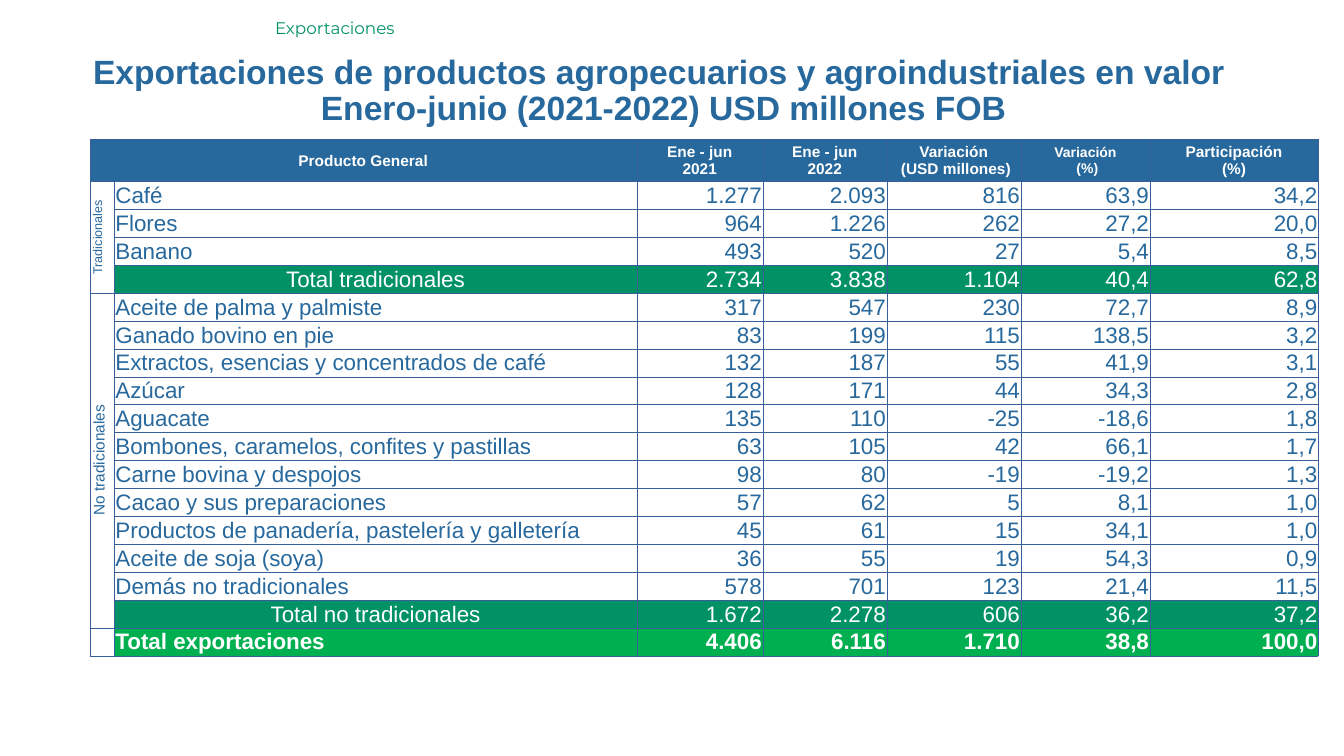
from dataclasses import dataclass
from lxml.etree import SubElement
from pptx import Presentation
from pptx.dml.color import RGBColor
from pptx.enum.text import MSO_ANCHOR, PP_ALIGN
from pptx.oxml.ns import qn
from pptx.util import Pt

PX = 4572
COLORS = {
    "blue": "27689D",
    "line": "395F9B",
    "label": "009267",
    "green": "009165",
    "bright": "00B050",
    "white": "FFFFFF",
}
LEFT, CENTER, RIGHT = PP_ALIGN.LEFT, PP_ALIGN.CENTER, PP_ALIGN.RIGHT
WIDTHS = [49, 1036, 250, 246, 266, 256, 334]
HEAD_H, ROW_H = 84, 55


@dataclass
class Row:
    name: str
    values: str
    kind: str = "item"


@dataclass
class Style:
    fill: str | None
    color: str
    align: PP_ALIGN
    bold: bool = False


@dataclass
class Group:
    name: str
    first: int
    last: int
    size: int


STYLES = {
    "item": Style(None, "blue", LEFT),
    "part": Style("green", "white", CENTER),
    "total": Style("bright", "white", LEFT, True),
}
HEADS = [
    ("Ene - jun\n2021", 11),
    ("Ene - jun\n2022", 11),
    ("Variación\n (USD millones)", 11),
    ("Variación\n (%)", 10),
    ("Participación\n(%)", 11),
]
ROWS = [
    Row("Café", "1.277 2.093 816 63,9 34,2"),
    Row("Flores", "964 1.226 262 27,2 20,0"),
    Row("Banano", "493 520 27 5,4 8,5"),
    Row("Total tradicionales", "2.734 3.838 1.104 40,4 62,8", "part"),
    Row("Aceite de palma y palmiste", "317 547 230 72,7 8,9"),
    Row("Ganado bovino en pie", "83 199 115 138,5 3,2"),
    Row("Extractos, esencias y concentrados de café", "132 187 55 41,9 3,1"),
    Row("Azúcar", "128 171 44 34,3 2,8"),
    Row("Aguacate", "135 110 -25 -18,6 1,8"),
    Row("Bombones, caramelos, confites y pastillas", "63 105 42 66,1 1,7"),
    Row("Carne bovina y despojos", "98 80 -19 -19,2 1,3"),
    Row("Cacao y sus preparaciones", "57 62 5 8,1 1,0"),
    Row("Productos de panadería, pastelería y galletería", "45 61 15 34,1 1,0"),
    Row("Aceite de soja (soya)", "36 55 19 54,3 0,9"),
    Row("Demás no tradicionales", "578 701 123 21,4 11,5"),
    Row("Total no tradicionales", "1.672 2.278 606 36,2 37,2", "part"),
    Row("Total exportaciones", "4.406 6.116 1.710 38,8 100,0", "total"),
]
GROUPS = [Group("Tradicionales", 1, 4, 9), Group("No tradicionales", 5, 16, 11)]


def write(frame, text: str, *, size: int, color: str = "blue", font: str = "Arial",
          bold: bool = False, align: PP_ALIGN = LEFT, spacing: float = 1.0) -> None:
    for index, line in enumerate(text.split("\n")):
        para = frame.add_paragraph() if index else frame.paragraphs[0]
        para.text = line
        para.alignment = align
        para.line_spacing = spacing
        for run in para.runs:
            run.font.name = font
            run.font.size = Pt(size)
            run.font.bold = bold
            run.font.color.rgb = RGBColor.from_string(COLORS[color])


def add_box(slide, left: int, top: int, width: int, height: int, text: str, **look) -> None:
    box = slide.shapes.add_textbox(left * PX, top * PX, width * PX, height * PX)
    box.text_frame.word_wrap = True
    box.text_frame.vertical_anchor = MSO_ANCHOR.MIDDLE
    write(box.text_frame, text, **look)


def prepare(cell) -> None:
    cell.margin_left = cell.margin_right = cell.margin_top = 2 * PX
    cell.margin_bottom = 0
    cell.vertical_anchor = MSO_ANCHOR.MIDDLE
    props = cell._tc.get_or_add_tcPr()
    for side in ("lnL", "lnR", "lnT", "lnB"):
        line = SubElement(props, qn(f"a:{side}"), w=str(Pt(0.25)))
        solid = SubElement(line, qn("a:solidFill"))
        SubElement(solid, qn("a:srgbClr"), val=COLORS["line"])
    cell.fill.background()
    SubElement(cell.text_frame.paragraphs[0]._p, qn("a:endParaRPr"), sz="900")


def paint(cell, color: str | None) -> None:
    if color:
        cell.fill.solid()
        cell.fill.fore_color.rgb = RGBColor.from_string(COLORS[color])


def add_grid(slide) -> None:
    count = len(ROWS) + 1
    height = HEAD_H + ROW_H * len(ROWS)
    table = slide.shapes.add_table(count, len(WIDTHS), 178 * PX, 276 * PX,
                                   sum(WIDTHS) * PX, height * PX).table
    table.first_row = table.horz_banding = False
    for column, width in zip(table.columns, WIDTHS):
        column.width = width * PX
    for index, row in enumerate(table.rows):
        row.height = (ROW_H if index else HEAD_H) * PX
        for cell in row.cells:
            prepare(cell)

    for col in range(len(WIDTHS)):
        paint(table.cell(0, col), "blue")
    table.cell(0, 0).merge(table.cell(0, 1))
    heads = [(0, ("Producto General", 11)), *enumerate(HEADS, 2)]
    for col, (text, size) in heads:
        write(table.cell(0, col).text_frame, text, size=size, color="white",
              bold=True, align=CENTER)

    for index, row in enumerate(ROWS, 1):
        style = STYLES[row.kind]
        for col, text in enumerate([row.name, *row.values.split()], 1):
            cell = table.cell(index, col)
            paint(cell, style.fill)
            write(cell.text_frame, text, size=16, color=style.color, bold=style.bold,
                  align=style.align if col == 1 else RIGHT)

    for group in GROUPS:
        cell = table.cell(group.first, 0)
        cell.merge(table.cell(group.last, 0))
        cell._tc.get_or_add_tcPr().set("vert", "vert270")
        write(cell.text_frame, group.name, size=group.size, align=CENTER)


def main() -> None:
    deck = Presentation()
    deck.slide_width, deck.slide_height = 2666 * PX, 1500 * PX
    slide = deck.slides.add_slide(deck.slide_layouts[6])
    add_box(slide, 526, 26, 2140, 60, "Exportaciones", size=12,
            color="label", font="Montserrat")
    add_box(slide, 16, 106, 2582, 152,
            "Exportaciones de productos agropecuarios y agroindustriales en valor"
            "\v Enero-junio (2021-2022) USD millones FOB",
            size=24, bold=True, align=CENTER, spacing=0.9)
    add_grid(slide)
    deck.save("out.pptx")


if __name__ == "__main__":
    main()
